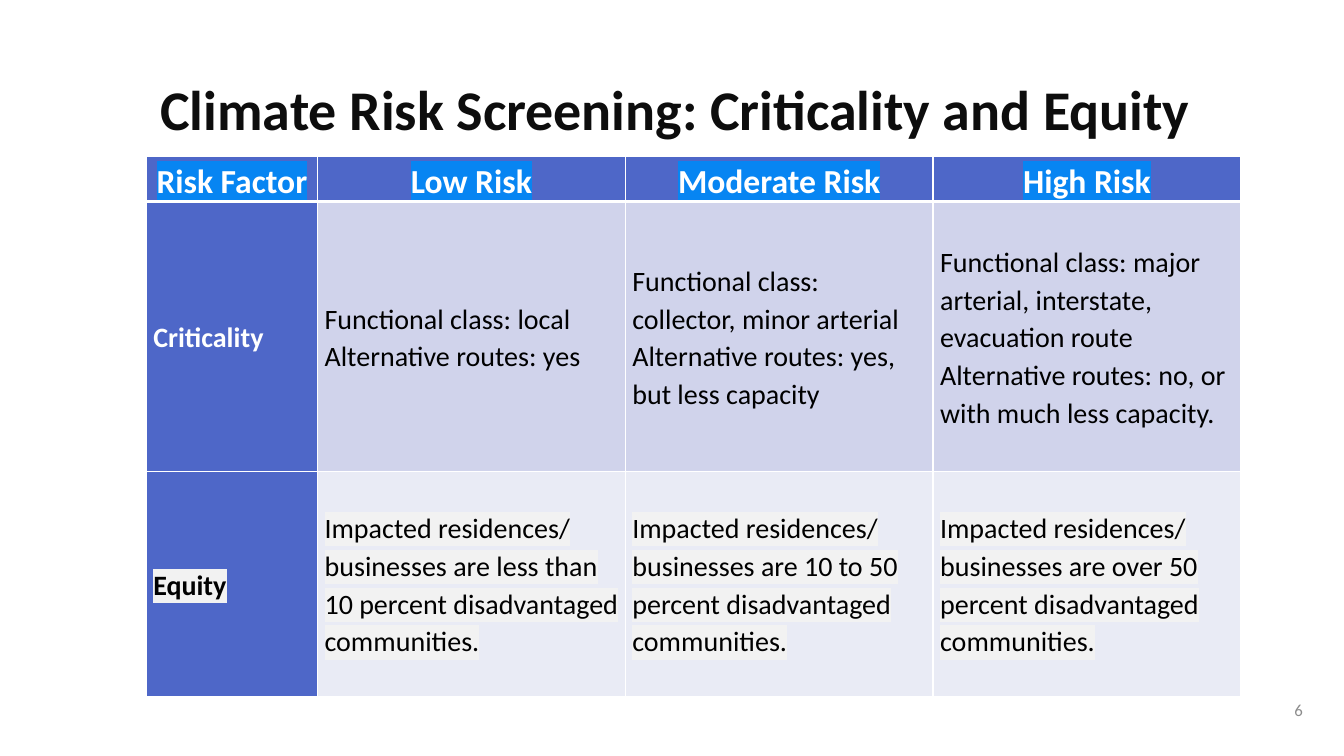
"""Build the climate risk screening slide with its criticality and equity table."""
from lxml.etree import SubElement, fromstring
from pptx import Presentation
from pptx.dml.color import RGBColor
from pptx.enum.text import MSO_ANCHOR, PP_ALIGN
from pptx.oxml.ns import nsdecls, qn
from pptx.util import Inches, Pt

THEME = {
    "font": "Calibri",
    "title": {"size": 40, "color": "0D0D0D", "bold": True},
    "page": {"size": 12, "color": "8C8C8C", "bold": False},
    "head": {"size": 24, "color": "FFFFFF", "bold": True, "mark": "0785F2"},
    "label": {"size": 20, "color": "FFFFFF", "bold": True},
    "body": {"size": 20, "color": "000000", "bold": False},
    "blue": "4E67C8",
    "bands": ["D0D3EB", "E9EBF5"],
    "rule": "FFFFFF",
    "mark": "F2F2F2",
}
MARK = {"mark": THEME["mark"]}
BODY = THEME["body"]
STYLES = [
    [THEME["head"]] * 4,
    [THEME["label"]] + [BODY] * 3,
    [BODY | MARK | {"bold": True}] + [BODY | MARK] * 3,
]
ROWS = [
    ["Risk Factor", "Low Risk", "Moderate Risk", "High Risk"],
    [
        "Criticality",
        "Functional class: local\nAlternative routes: yes",
        "Functional class: collector, minor arterial\n"
        "Alternative routes: yes, but less capacity",
        "Functional class: major arterial, interstate, evacuation route\n"
        "Alternative routes: no, or with much less capacity.",
    ],
    ["Equity"] + [
        f"Impacted residences/ businesses are {share} percent disadvantaged communities."
        for share in ("less than 10", "10 to 50", "over 50")
    ],
]
COLS = [12.75, 22.9, 22.9, 22.9]
TALL = [6, 35.73, 29.73]
WIDE, HIGH = Inches(13.33), Inches(7.5)


def place(left, top, width, height):
    """Turn percentages of the slide into lengths."""
    return [int(part * side / 100) for part, side in
            zip((left, top, width, height), (WIDE, HIGH) * 2)]


def write(frame, text, style, align, space):
    """Fill a text frame with one styled paragraph per line of text."""
    for num, line in enumerate(text.split("\n")):
        para = frame.add_paragraph() if num else frame.paragraphs[0]
        form = {"alignment": align, "line_spacing": space,
                "space_before": Pt(0), "space_after": Pt(0)}
        for name, value in form.items():
            setattr(para, name, value)
        run = para.add_run()
        run.text = line
        form = {"name": THEME["font"], "size": Pt(style["size"]), "bold": style["bold"]}
        for name, value in form.items():
            setattr(run.font, name, value)
        run.font.color.rgb = RGBColor.from_string(style["color"])
        if "mark" in style:
            mark = fromstring(f'<a:highlight {nsdecls("a")}/>')
            SubElement(mark, qn("a:srgbClr"), val=style["mark"])
            run.font._element.find(qn("a:solidFill")).addnext(mark)


deck = Presentation()
deck.slide_width, deck.slide_height = WIDE, HIGH
slide = deck.slides.add_slide(deck.slide_layouts[5])

title = slide.shapes.title
page = slide.shapes.add_textbox(*place(74.34, 92.27, 23.33, 3.33))
spot = place(2.93, 7.87, 94.6, 12.8)
for name, value in zip(("left", "top", "width", "height"), spot):
    setattr(title, name, value)
for box, text, key, align in (
    (title, "Climate Risk Screening: Criticality and Equity", "title", PP_ALIGN.CENTER),
    (page, "6", "page", PP_ALIGN.RIGHT),
):
    form = {"word_wrap": True, "vertical_anchor": MSO_ANCHOR.MIDDLE}
    for name, value in form.items():
        setattr(box.text_frame, name, value)
    write(box.text_frame, text, THEME[key], align, 1.0)

grid = slide.shapes.add_table(
    len(ROWS), len(COLS), *place(10.88, 20.67, sum(COLS), sum(TALL))).table
for col, part in zip(grid.columns, COLS):
    col.width = int(part * WIDE / 100)
for row, part in zip(grid.rows, TALL):
    row.height = int(part * HIGH / 100)

for r, texts in enumerate(ROWS):
    for c, text in enumerate(texts):
        cell = grid.cell(r, c)
        form = {
            "margin_left": Inches(0.07), "margin_right": Inches(0.07),
            "margin_top": Inches(0.01), "margin_bottom": Inches(0.01),
            "vertical_anchor": MSO_ANCHOR.MIDDLE if r else MSO_ANCHOR.BOTTOM,
        }
        for name, value in form.items():
            setattr(cell, name, value)
        write(cell.text_frame, text, STYLES[r][c],
              PP_ALIGN.LEFT if r else PP_ALIGN.CENTER, 1.1 if r else 0.9)
        cell.fill.solid()
        tint = THEME["bands"][r - 1] if r and c else THEME["blue"]
        cell.fill.fore_color.rgb = RGBColor.from_string(tint)
        props = cell._tc.get_or_add_tcPr()
        for num, side in enumerate("LRTB"):
            thick = (r, side) in ((0, "B"), (1, "T"))
            edge = fromstring(
                f'<a:ln{side} {nsdecls("a")} w="{Pt(3 if thick else 1)}"/>')
            fill = SubElement(edge, qn("a:solidFill"))
            SubElement(fill, qn("a:srgbClr"), val=THEME["rule"])
            props.insert(num, edge)

deck.save("out.pptx")
